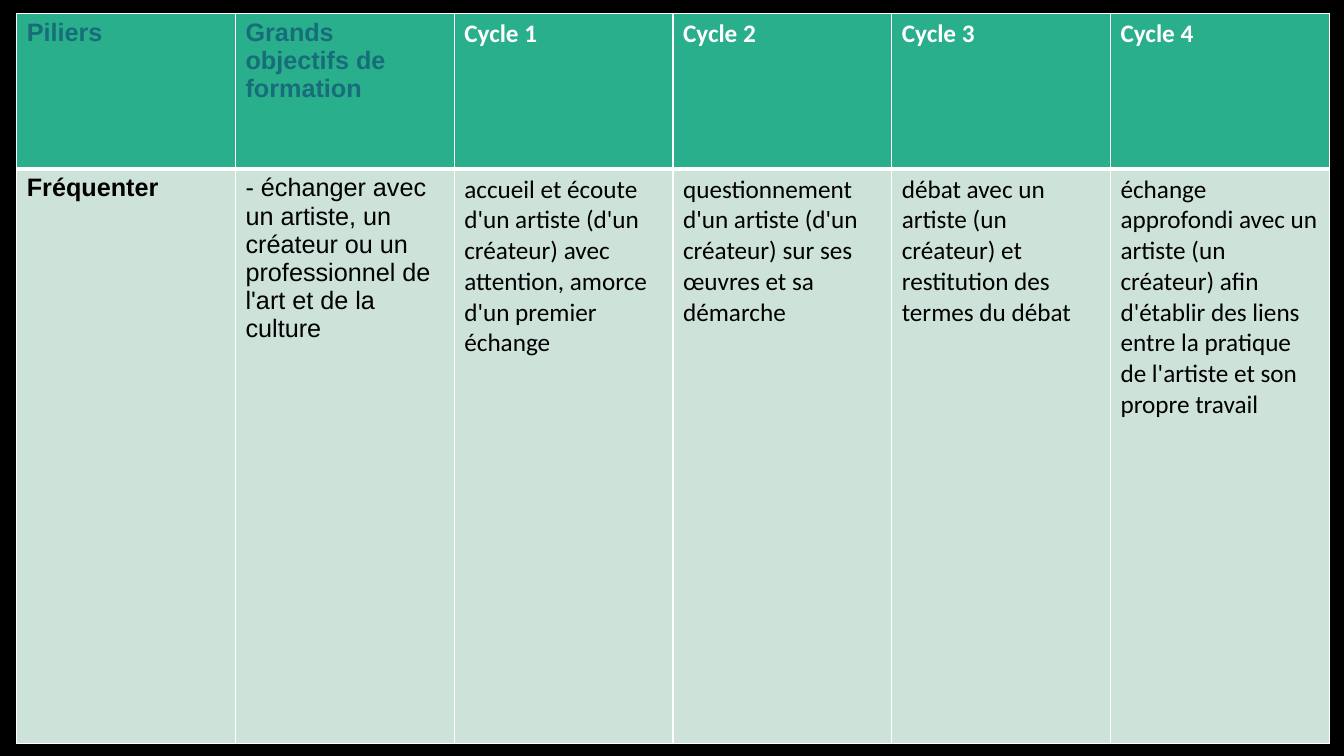
from lxml import etree
from pptx import Presentation
from pptx import util as u
from pptx.dml.color import RGBColor
from pptx.oxml import ns

BLACK = RGBColor(0x00, 0x00, 0x00)
WHITE = RGBColor(0xFF, 0xFF, 0xFF)
GREEN = RGBColor(0x29, 0xAF, 0x8C)
PALE_GREEN = RGBColor(0xCD, 0xE3, 0xDA)
TEAL = RGBColor(0x17, 0x6D, 0x7A)

PX = 9525
THIN, THICK = 1, 3

COLUMNS = [
    ("Piliers", "Fréquenter"),
    ("Grands objectifs de formation",
     "- échanger avec un artiste, un créateur ou un professionnel de l'art et de la culture"),
    ("Cycle 1",
     "accueil et écoute d'un artiste (d'un créateur) avec attention, amorce d'un premier échange"),
    ("Cycle 2",
     "questionnement d'un artiste (d'un créateur) sur ses œuvres et sa démarche"),
    ("Cycle 3",
     "débat avec un artiste (un créateur) et restitution des termes du débat"),
    ("Cycle 4",
     "échange approfondi avec un artiste (un créateur) afin d'établir des liens "
     "entre la pratique de l'artiste et son propre travail"),
]
LABEL_COLUMNS = 2


class SlideBuilder:
    label_font = "Arial"
    cycle_font = "Calibri"
    text_size = u.Pt(18)

    def __init__(self, presentation):
        self.slide = presentation.slides.add_slide(presentation.slide_layouts[6])

    def background(self, color):
        fill = self.slide.background.fill
        fill.solid()
        fill.fore_color.rgb = color

    def table(self, left, top, width, row_heights, columns):
        shape = self.slide.shapes.add_table(
            len(row_heights), len(columns), left * PX, top * PX,
            width * PX, sum(row_heights) * PX)
        table = shape.table
        table.horz_banding = False
        for row, height in zip(table.rows, row_heights):
            row.height = height * PX
        for column_index, entries in enumerate(columns):
            table.columns[column_index].width = width * PX // len(columns)
            for row_index, entry in enumerate(entries):
                self.cell(table.cell(row_index, column_index), entry,
                          row_index == 0, column_index)

    def cell(self, cell, entry, is_header, column_index):
        is_label = column_index < LABEL_COLUMNS
        self.borders(cell, {"L": THIN, "R": THIN,
                            "T": THIN if is_header else THICK,
                            "B": THICK if is_header else THIN})
        cell.fill.solid()
        cell.fill.fore_color.rgb = GREEN if is_header else PALE_GREEN
        cell.text_frame.text = entry
        font = cell.text_frame.paragraphs[0].runs[0].font
        font.name = self.label_font if is_label else self.cycle_font
        font.size = self.text_size
        font.bold = is_header or column_index == 0
        header_color = TEAL if is_label else WHITE
        font.color.rgb = header_color if is_header else BLACK

    def borders(self, cell, widths):
        properties = cell._tc.get_or_add_tcPr()
        for side in "LRTB":
            line = etree.SubElement(properties, ns.qn(f"a:ln{side}"),
                                    w=str(u.Pt(widths[side])))
            fill = etree.SubElement(line, ns.qn("a:solidFill"))
            etree.SubElement(fill, ns.qn("a:srgbClr"), val=str(WHITE))


def main():
    presentation = Presentation()
    presentation.slide_width = 1280 * PX
    presentation.slide_height = 720 * PX
    builder = SlideBuilder(presentation)
    builder.background(BLACK)
    builder.table(16, 13, 1250, [148, 547], COLUMNS)
    presentation.save("out.pptx")


if __name__ == "__main__":
    main()
